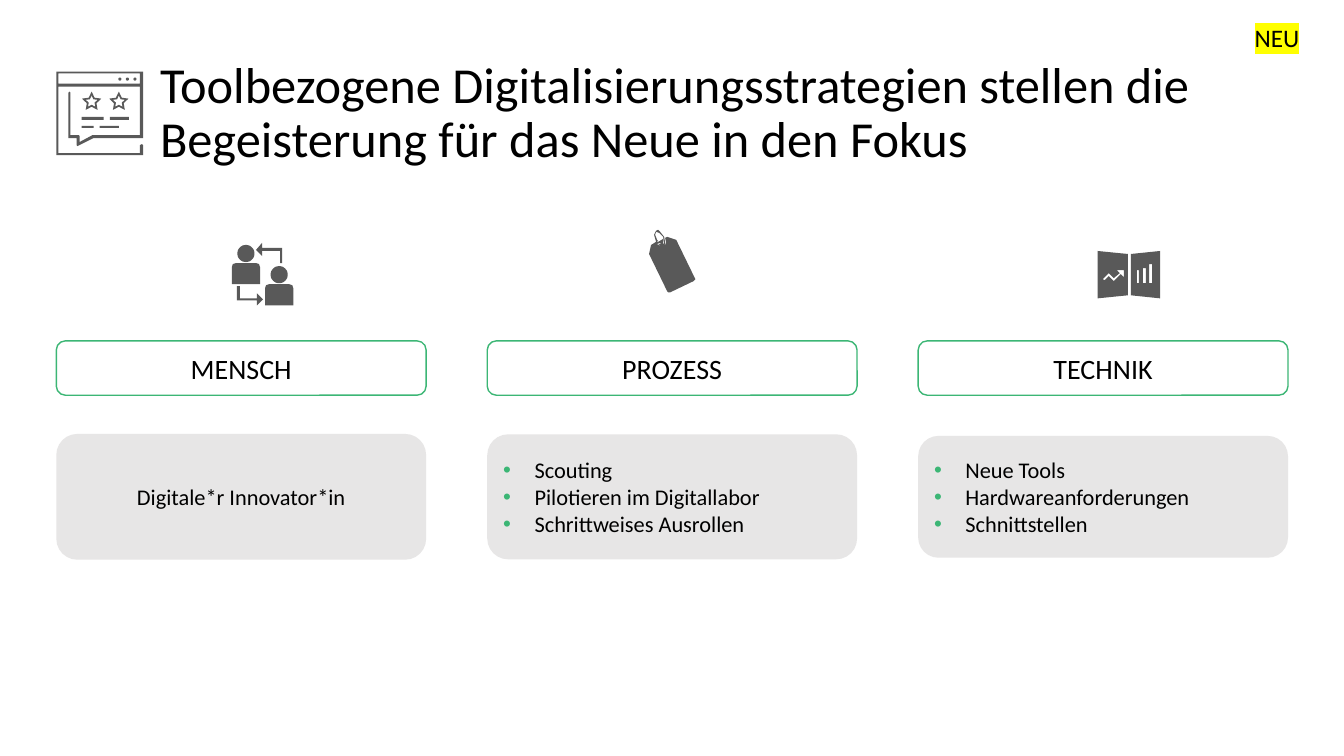
import math
from dataclasses import dataclass

from lxml import etree
from pptx import Presentation
from pptx import util as u
from pptx.dml.color import RGBColor
from pptx.enum import shapes, text
from pptx.oxml.ns import qn

ROUND = shapes.MSO_SHAPE.ROUNDED_RECTANGLE
PROCESS = shapes.MSO_SHAPE.FLOWCHART_ALTERNATE_PROCESS
LEFT, CENTER = text.PP_ALIGN.LEFT, text.PP_ALIGN.CENTER


@dataclass(frozen=True)
class Theme:
    font: str = "Calibri"
    ink: str = "000000"
    green: str = "3CB675"
    panel: str = "E7E6E6"
    icon: str = "595959"
    marker: str = "FFFF00"
    title_size: int = 36
    heading_size: int = 20
    body_size: int = 16
    tag_size: int = 18


# Icon outlines, in hundredths of an inch on the slide
def box(left, top, right, bottom):
    return [(left, top), (right, top), (right, bottom), (left, bottom)]


def ring(x, y, radii, count):
    """Points around a centre, with the radii taken in turn."""
    angles = [2 * math.pi * i / count - math.pi / 2 for i in range(count)]
    return [(x + radii[i % len(radii)] * math.cos(a), y + radii[i % len(radii)] * math.sin(a))
            for i, a in enumerate(angles)]


def person(x, top):
    """Round head above a body with rounded shoulders."""
    left, right, shoulder, base = x - 14, x + 14, top + 18, top + 39
    body = [(left, base), (left, shoulder + 4), (left + 1, shoulder + 1), (left + 4, shoulder),
            (right - 4, shoulder), (right - 1, shoulder + 1), (right, shoulder + 4), (right, base)]
    return [ring(x, top + 8.5, [8.5], 32), body]


FEEDBACK_WINDOW = [
    [(56, 71), (142, 71), (142, 137), (93, 137), (77, 145), (76, 144), (76, 137), (68, 137),
     (68, 92), (69, 91), (70, 92), (70, 134), (78, 134), (79, 135), (79, 141), (92, 134),
     (139, 134), (139, 86), (58, 86), (58, 152), (139, 152), (139, 144), (141, 143),
     (142, 144), (142, 154), (56, 154)],
    box(58, 73, 139, 83),
    box(81, 125, 93, 127), box(99, 125, 118, 127),
    box(81, 116, 103, 119), box(109, 116, 128, 119),
    *[ring(x, 101, radii, 10) for x in (91, 118) for radii in ([10, 5], [6.2, 3])],
    *[ring(x, 78.5, [1.5], 16) for x in (119, 126.5, 134)],
]
EXCHANGE = [
    *person(244, 243), *person(277, 264),
    [(235, 284), (238, 284), (238, 296), (255, 296), (255, 291), (261, 297), (255, 303),
     (255, 298), (235, 298)],
    [(260, 241), (260, 246), (280, 246), (280, 261), (278, 261), (278, 249), (260, 249),
     (260, 254), (254, 248)],
]
LABEL_TAG = [
    [(662, 235), (671, 238), (689, 275), (690, 277), (688, 279), (665, 290), (663, 290),
     (662, 289), (644, 252), (646, 243), (651, 240), (653, 240), (658, 237), (658, 241),
     (658, 243), (656, 242), (655, 241), (652, 242), (654, 244), (659, 245), (661, 241),
     (660, 236)],
    [(653, 228), (655, 230), (659, 235), (660, 241), (659, 245), (655, 244), (653, 243),
     (655, 242), (658, 243), (659, 241), (658, 235), (654, 231), (651, 230), (650, 233),
     (652, 238), (653, 239), (651, 240), (649, 233), (651, 229)],
]
REPORT = [
    [(1119, 252), (1089, 249), (1089, 296), (1119, 293)],
    [(1122, 252), (1151, 249), (1151, 296), (1122, 293)],
    box(1128, 268, 1130, 281), box(1134, 266, 1137, 281), box(1140, 262, 1143, 281),
    [(1094, 277), (1100, 271), (1105, 276), (1111, 271), (1108, 268), (1115, 268),
     (1115, 275), (1112, 272), (1105, 279), (1100, 274), (1096, 278)],
]

# Heading, heading shape, icon, body shape, body height, body lines
COLUMNS = [
    ("MENSCH", PROCESS, EXCHANGE, PROCESS, 3.17, ["Digitale*r Innovator*in"]),
    ("PROZESS", PROCESS, LABEL_TAG, ROUND, 3.15,
     ["Scouting", "Pilotieren im Digitallabor", "Schrittweises Ausrollen"]),
    ("TECHNIK", ROUND, REPORT, PROCESS, 3.07,
     ["Neue Tools", "Hardwareanforderungen", "Schnittstellen"]),
]


class SlideBuilder:
    def __init__(self, presentation, theme):
        self.theme = theme
        self.slide = presentation.slides.add_slide(presentation.slide_layouts[5])

    def add_lines(self, frame, lines, size, align=LEFT, bullets=False, spacing=None):
        for i, line in enumerate(lines):
            paragraph = frame.paragraphs[0] if i == 0 else frame.add_paragraph()
            if bullets:
                self.bullet(paragraph)
            for name, value in {"alignment": align, "line_spacing": spacing}.items():
                setattr(paragraph, name, value)
            run = paragraph.add_run()
            run.text = line
            for name, value in {"name": self.theme.font, "size": u.Pt(size)}.items():
                setattr(run.font, name, value)
            run.font.color.rgb = RGBColor.from_string(self.theme.ink)

    def bullet(self, paragraph):
        properties = paragraph._p.get_or_add_pPr()
        properties.set("marL", str(u.Cm(0.79)))
        properties.set("indent", str(-u.Cm(0.79)))
        color = etree.SubElement(properties, qn("a:buClr"))
        etree.SubElement(color, qn("a:srgbClr"), val=self.theme.green)
        etree.SubElement(properties, qn("a:buFont"), typeface="Arial")
        etree.SubElement(properties, qn("a:buChar"), char="•")

    def title(self, line, left, top, width, height):
        title = self.slide.shapes.title
        for name, value in {"left": left, "top": top, "width": width, "height": height}.items():
            setattr(title, name, u.Cm(value))
        title.text_frame.vertical_anchor = text.MSO_ANCHOR.MIDDLE
        self.add_lines(title.text_frame, [line], self.theme.title_size, spacing=0.9)

    def paint(self, shape, fill=None, line=None):
        shape.shadow.inherit = False
        for part, color in ((shape.fill, fill), (shape.line.fill, line)):
            if color:
                part.solid()
                part.fore_color.rgb = RGBColor.from_string(color)
            else:
                part.background()

    def panel(self, kind, place, lines, size, align=CENTER, bullets=False, fill=None, line=None):
        shape = self.slide.shapes.add_shape(kind, *map(u.Cm, place))
        self.paint(shape, fill, line)
        if line:
            shape.line.width = u.Pt(1)
        shape.text_frame.vertical_anchor = text.MSO_ANCHOR.MIDDLE
        self.add_lines(shape.text_frame, lines, size, align, bullets)

    def icon(self, outlines):
        # Ten drawing units to each hundredth of an inch
        scaled = [[(x * 10, y * 10) for x, y in outline] for outline in outlines]
        builder = self.slide.shapes.build_freeform(*scaled[0][0], scale=u.Cm(0.0254) / 10)
        for i, outline in enumerate(scaled):
            if i:
                builder.move_to(*outline[0])
            builder.add_line_segments(outline[1:], close=True)
        self.paint(builder.convert_to_shape(), fill=self.theme.icon)

    def tag(self, line, *place):
        frame = self.slide.shapes.add_textbox(*map(u.Cm, place)).text_frame
        frame.word_wrap = True
        self.add_lines(frame, [line], self.theme.tag_size)
        properties = frame.paragraphs[0].runs[0]._r.get_or_add_rPr()
        highlight = etree.Element(qn("a:highlight"))
        etree.SubElement(highlight, qn("a:srgbClr"), val=self.theme.marker)
        properties.find(qn("a:solidFill")).addnext(highlight)


def main():
    presentation = Presentation()
    presentation.slide_width, presentation.slide_height = u.Cm(33.87), u.Cm(19.05)
    theme = Theme()
    builder = SlideBuilder(presentation, theme)

    # Title row
    builder.title("Toolbezogene Digitalisierungsstrategien stellen die "
                  "Begeisterung für das Neue in den Fokus", 3.78, 1.04, 26.47, 3.68)
    builder.icon(FEEDBACK_WINDOW)
    builder.tag("NEU", 31.37, 0.43, 4.29, 1.02)

    # Three columns: icon, heading, body
    first_left, step, width, body_middle = 1.42, 10.86, 9.32, 12.52
    for i, (heading, heading_kind, icon, body_kind, height, lines) in enumerate(COLUMNS):
        left = first_left + i * step
        bullets = len(lines) > 1
        builder.icon(icon)
        builder.panel(heading_kind, (left, 8.59, width, 1.37), [heading],
                      theme.heading_size, line=theme.green)
        builder.panel(body_kind, (left, body_middle - height / 2, width, height), lines,
                      theme.body_size, LEFT if bullets else CENTER, bullets, fill=theme.panel)

    presentation.save("out.pptx")


if __name__ == "__main__":
    main()
